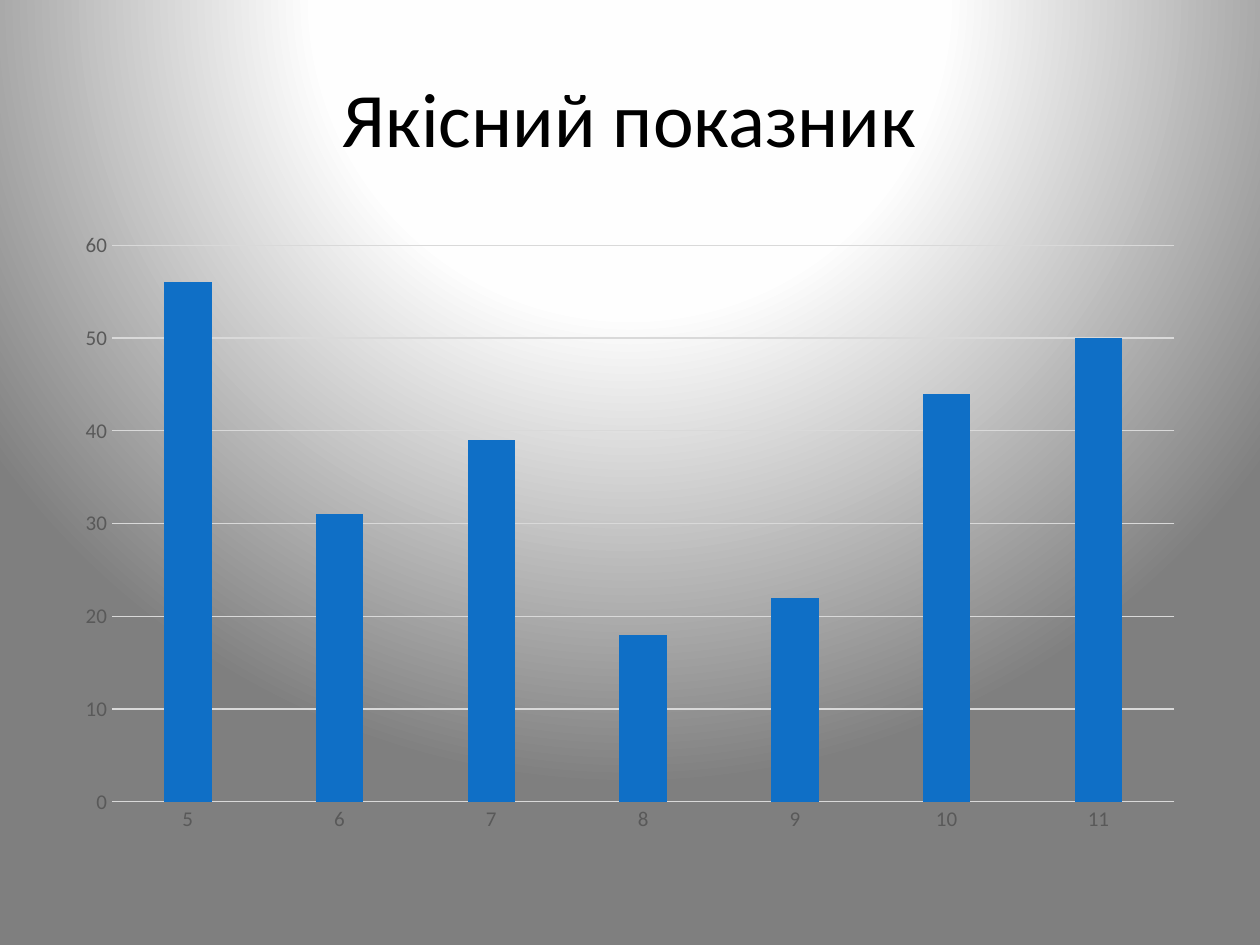
import pptx
import pptx.chart.data
import pptx.dml.color
import pptx.enum.chart
import pptx.enum.text
import pptx.oxml
import pptx.oxml.ns
import pptx.util
from pptx.util import Inches

RGBColor = pptx.dml.color.RGBColor
BLACK = RGBColor(0x00, 0x00, 0x00)
LABEL_GRAY = RGBColor(0x59, 0x59, 0x59)
LINE_GRAY = RGBColor(0xD9, 0xD9, 0xD9)
BAR_BLUE = RGBColor(0x0F, 0x6F, 0xC6)
GLOW_WHITE = RGBColor(0xFF, 0xFF, 0xFF)
GLOW_MIDDLE = RGBColor(0xFE, 0xFE, 0xFE)
GLOW_EDGE = RGBColor(0x7F, 0x7F, 0x7F)
FONT = "Calibri"

GRADES = ["5", "6", "7", "8", "9", "10", "11"]
QUALITY = [56, 31, 39, 18, 22, 44, 50]


def set_font(font, size, color):
    font.name = FONT
    font.size = pptx.util.Pt(size)
    font.color.rgb = color


def set_line(line, color):
    line.color.rgb = color
    line.width = pptx.util.Pt(0.75)


def add_glow_background(page):
    """Fill the page with a circular gradient centred above its top edge."""
    page.background.fill.solid()
    stops = "".join(
        f'<a:gs pos="{percent * 1000}"><a:srgbClr val="{color}"/></a:gs>'
        for percent, color in [(0, GLOW_WHITE), (40, GLOW_MIDDLE), (100, GLOW_EDGE)]
    )
    gradient = pptx.oxml.parse_xml(
        f'<a:gradFill {pptx.oxml.ns.nsdecls("a")} rotWithShape="1">'
        f"<a:gsLst>{stops}</a:gsLst>"
        '<a:path path="circle">'
        '<a:fillToRect l="50000" t="-80000" r="50000" b="180000"/>'
        "</a:path></a:gradFill>"
    )
    solid = page.element.find(".//" + pptx.oxml.ns.qn("a:solidFill"))
    solid.getparent().replace(solid, gradient)


def add_title(page, text):
    box = page.shapes.add_textbox(Inches(0.5), Inches(0.3), Inches(9), Inches(1.25))
    frame = box.text_frame
    frame.word_wrap = True
    frame.vertical_anchor = pptx.enum.text.MSO_ANCHOR.MIDDLE
    para = frame.paragraphs[0]
    para.text = text
    para.alignment = pptx.enum.text.PP_ALIGN.CENTER
    set_font(para.font, 44, BLACK)


def style_axis(axis):
    axis.major_tick_mark = pptx.enum.chart.XL_TICK_MARK.NONE
    axis.minor_tick_mark = pptx.enum.chart.XL_TICK_MARK.NONE
    set_font(axis.tick_labels.font, 12, LABEL_GRAY)


def add_quality_chart(page):
    data = pptx.chart.data.CategoryChartData()
    data.categories = GRADES
    data.add_series("Series 1", QUALITY)
    chart = page.shapes.add_chart(
        pptx.enum.chart.XL_CHART_TYPE.COLUMN_CLUSTERED,
        Inches(0.5), Inches(1.75), Inches(9), Inches(4.95), data,
    ).chart
    chart.has_title = False
    chart.has_legend = False
    set_font(chart.font, 10, BLACK)

    plot = chart.plots[0]
    plot.gap_width = 219
    plot.overlap = -27
    plot.vary_by_categories = False
    bars = plot.series[0].format.fill
    bars.solid()
    bars.fore_color.rgb = BAR_BLUE

    style_axis(chart.category_axis)
    set_line(chart.category_axis.format.line, LINE_GRAY)
    style_axis(chart.value_axis)
    chart.value_axis.format.line.fill.background()
    set_line(chart.value_axis.major_gridlines.format.line, LINE_GRAY)


def main():
    deck = pptx.Presentation()
    deck.slide_width = Inches(10)
    deck.slide_height = Inches(7.5)
    page = deck.slides.add_slide(deck.slide_layouts[6])
    add_glow_background(page)
    add_title(page, "Якісний показник")
    add_quality_chart(page)
    deck.save("out.pptx")


if __name__ == "__main__":
    main()
